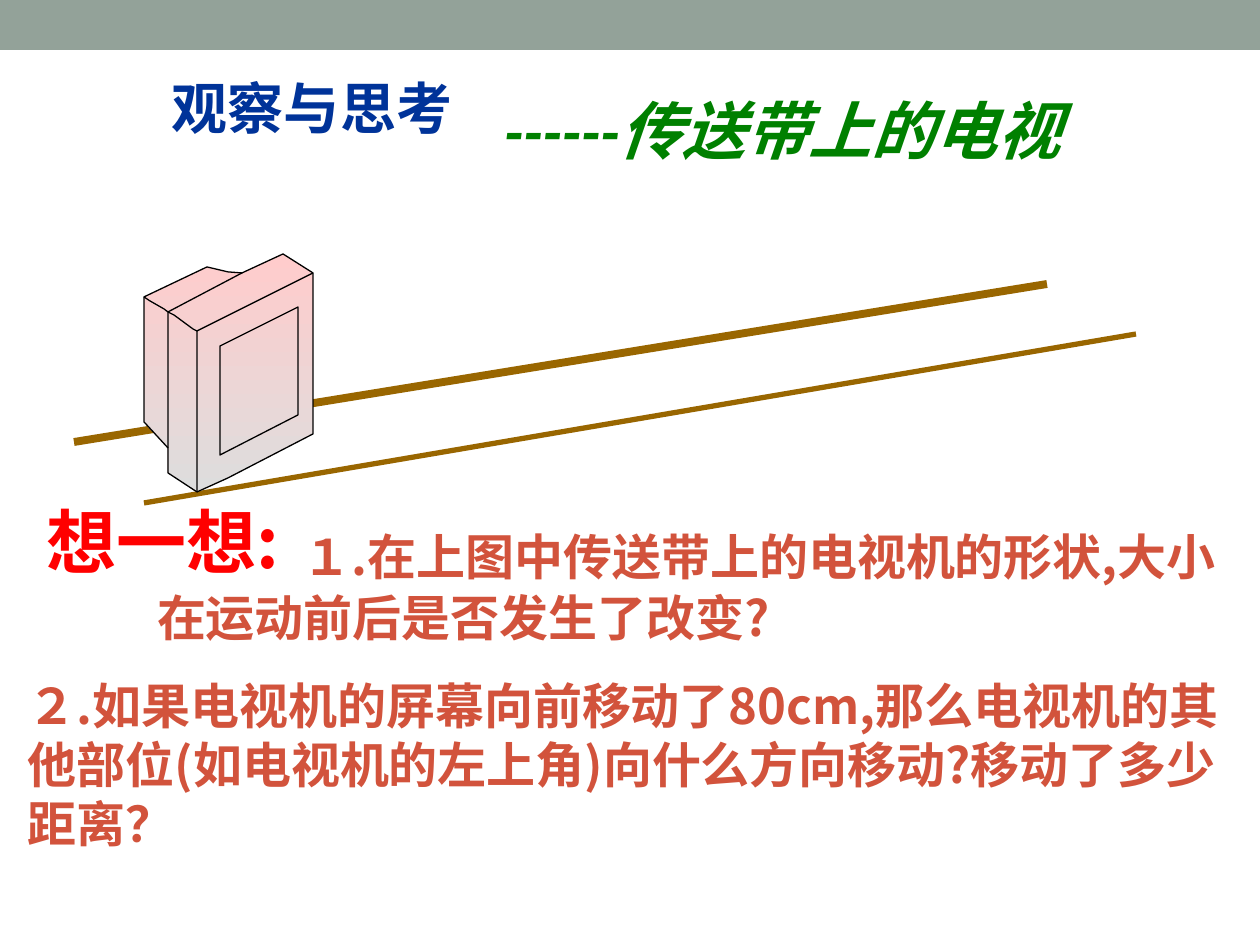
from lxml.etree import SubElement
from pptx import Presentation
from pptx.dml.color import RGBColor
from pptx.enum.shapes import MSO_CONNECTOR as CONNECTOR, MSO_SHAPE as SHAPE
from pptx.enum.text import MSO_ANCHOR as ANCHOR
from pptx.oxml.ns import qn
from pptx.util import Emu, Pt

PX = 914400 / 126
NOTO = "Noto Sans CJK SC"
RUST = "D2533C"


def px(*lengths):
    """Turn pixel lengths into EMU."""
    return [Emu(round(length * PX)) for length in lengths]


def write(box, text, place, size, color, font=NOTO, italic=False, pitch=None, indent=0):
    box.left, box.top, box.width, box.height = px(*place)
    frame = box.text_frame
    frame.word_wrap = True
    frame.vertical_anchor = ANCHOR.TOP
    frame.margin_left, frame.margin_right, frame.margin_top, frame.margin_bottom = px(13, 13, 6, 6)
    para = frame.paragraphs[0]
    para.line_spacing = Pt(pitch) if pitch else None
    props = para._p.get_or_add_pPr()
    props.set("algn", "l")
    props.set("indent", str(px(indent)[0]))
    span = para.add_run()
    span.text = text
    span.font.size, span.font.bold, span.font.italic = Pt(size), True, italic
    span.font.name = font
    span.font.color.rgb = RGBColor.from_string(color)
    SubElement(span._r.get_or_add_rPr(), qn("a:ea")).set("typeface", NOTO)


deck = Presentation()
deck.slide_width, deck.slide_height = px(1260, 945)
page = deck.slides.add_slide(deck.slide_layouts[5])
shapes = page.shapes

band = shapes.add_shape(SHAPE.RECTANGLE, *px(0, 0, 1260, 50))
band.shadow.inherit = False
band.fill.solid()
band.fill.fore_color.rgb = RGBColor.from_string("93A299")
band.line.fill.background()

# Conveyor belt: far edge, then near edge
for ends, width in [((74, 442, 1047, 284), 4.5), ((144, 503, 1136, 334), 3)]:
    edge = shapes.add_connector(CONNECTOR.STRAIGHT, *px(*ends))
    edge.line.color.rgb = RGBColor.from_string("996600")
    edge.line.width = Pt(width)
    SubElement(edge._element.spPr, qn("a:effectLst"))

# Television: filled outline, then the edges of the case and the screen
outline = [(197, 492), (168, 473), (168, 448), (144, 422), (144, 297), (207, 267),
           (228, 272), (242, 273), (283, 254), (313, 273), (313, 434), (228, 478)]
screen = [(298, 415), (298, 307), (220, 346), (220, 455), (298, 415)]
case_edges = [
    [(168, 312), (164, 309), (150, 301), (144, 297)],
    [(197, 331), (193, 329), (174, 315), (168, 312)],
    [(168, 448), (168, 312), (242, 273)],
    [(313, 273), (197, 331), (197, 492)],
]
for points, closed in [(outline, True)] + [(edge, False) for edge in [screen, *case_edges]]:
    builder = shapes.build_freeform(*points[0], scale=PX)
    builder.add_line_segments(points[1:], close=closed)
    part = builder.convert_to_shape()
    part.shadow.inherit = False
    part.line.color.rgb = RGBColor.from_string("000000")
    part.line.width = Pt(0.75)
    if closed:
        part.fill.gradient()
        part.fill.gradient_angle = 270
        for stop, color, position in zip(part.fill.gradient_stops, ["FFCCCC", "DDDDDD"], [0, 1]):
            stop.color.rgb = RGBColor.from_string(color)
            stop.position = position
    else:
        part.fill.background()

write(shapes.title, "观察与思考", (159, 68, 307, 54), 32, "003399", pitch=38)
texts = [
    ("------传送带上的电视", (491, 86, 673, 88), 36, "008000",
     {"font": "Calibri", "italic": True}),
    ("想一想:", (34, 493, 318, 97), 40, "FF0000", {"pitch": 48}),
    ("１.在上图中传送带上的电视机的形状,大小在运动前后是否发生了改变?",
     (144, 518, 1116, 130), 28, RUST, {"pitch": 35, "indent": 146}),
    ("２.如果电视机的屏幕向前移动了80cm,那么电视机的其他部位(如电视机的左上角)"
     "向什么方向移动?移动了多少距离？", (15, 670, 1235, 189), 28, RUST, {"pitch": 33.5}),
]
for text, place, size, color, options in texts:
    write(shapes.add_textbox(*px(*place)), text, place, size, color, **options)

deck.save("out.pptx")
